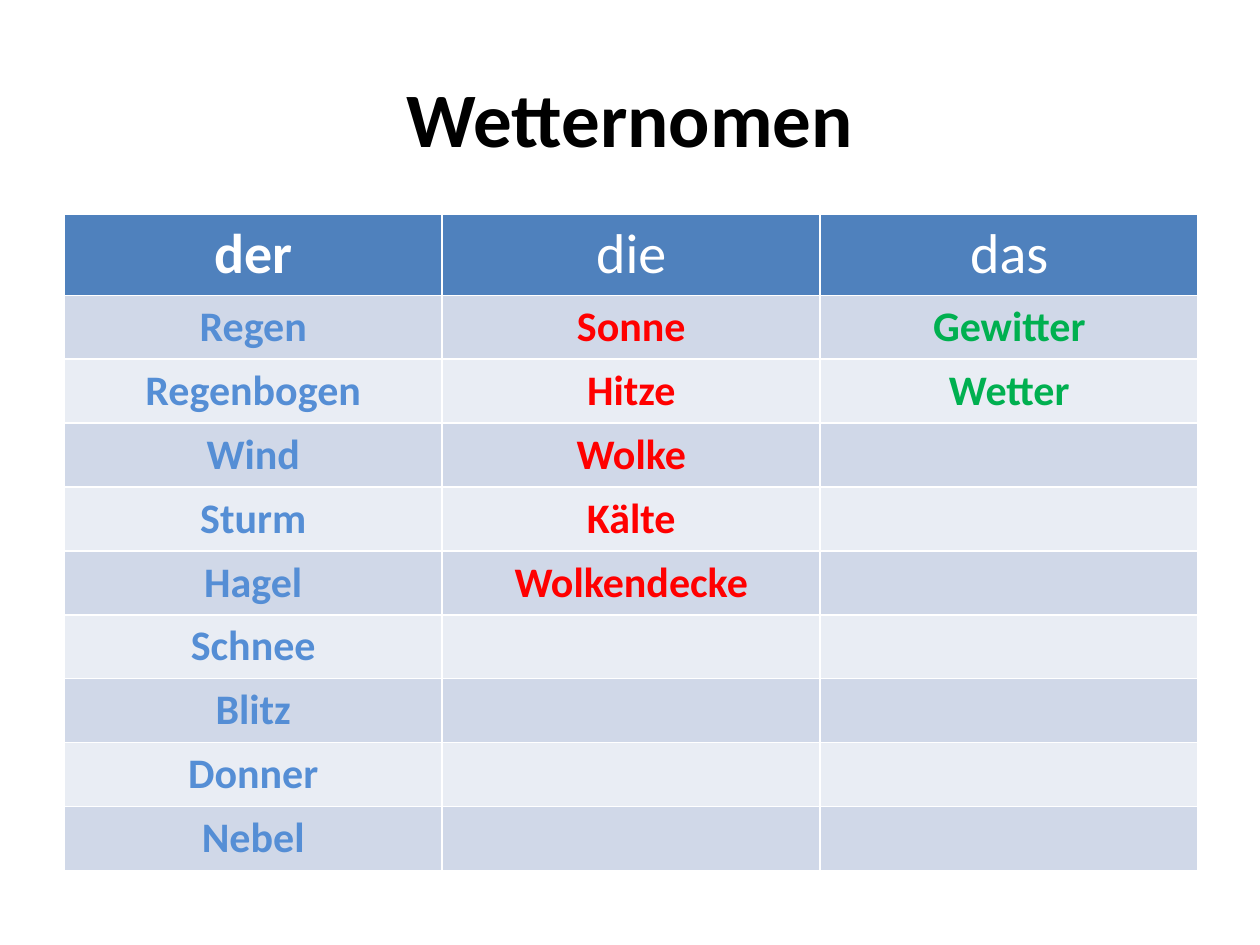
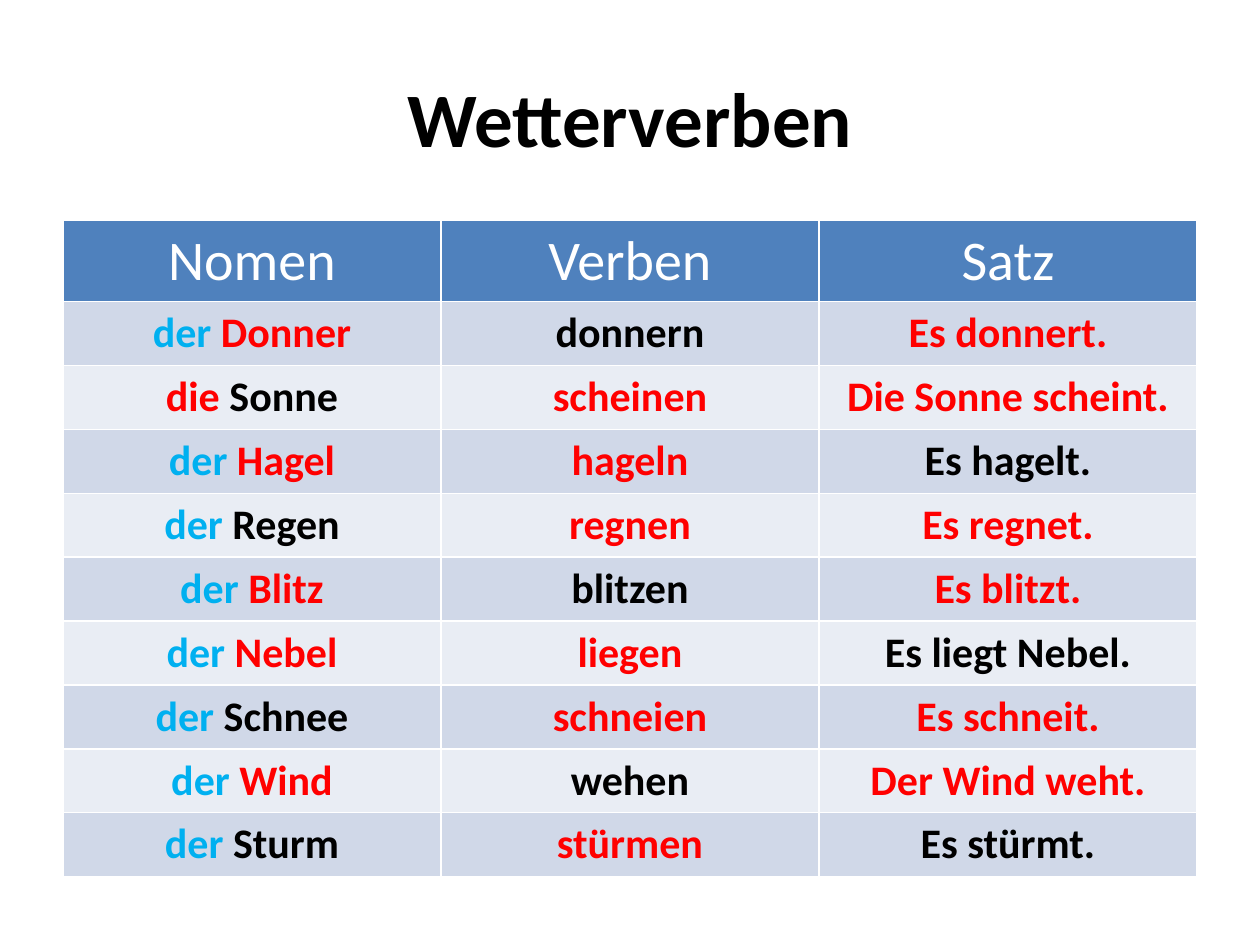
from dataclasses import dataclass
from itertools import zip_longest

from pptx import Presentation
from pptx.dml.color import RGBColor
from pptx.enum.text import MSO_ANCHOR, PP_ALIGN
from pptx.util import Inches, Pt


@dataclass(frozen=True)
class Theme:
    font: str = "Calibri"
    title_size: int = 44
    header_size: int = 32
    body_size: int = 24
    black: str = "000000"
    white: str = "FFFFFF"
    red: str = "FF0000"
    green: str = "00B050"
    noun_blue: str = "558ED5"
    article_blue: str = "00B0F0"
    header_fill: str = "4F81BD"
    bands: tuple = ("D0D8E8", "E9EDF4")


THEME = Theme()
COLUMN_WIDTH = 3
HEADER_HEIGHT = 0.63
ROW_HEIGHT = 0.5

# Nouns by article: article -> (colour, nouns)
WEATHER_NOUNS = {
    "der": (THEME.noun_blue, ["Regen", "Regenbogen", "Wind", "Sturm", "Hagel",
                              "Schnee", "Blitz", "Donner", "Nebel"]),
    "die": (THEME.red, ["Sonne", "Hitze", "Wolke", "Kälte", "Wolkendecke"]),
    "das": (THEME.green, ["Gewitter", "Wetter"]),
}

# Article, noun, verb, sentence, and which of them are given (the rest are answers)
WEATHER_VERBS = [
    ("der", "Donner", "donnern", "Es donnert.", {"verb"}),
    ("die", "Sonne", "scheinen", "Die Sonne scheint.", {"noun"}),
    ("der", "Hagel", "hageln", "Es hagelt.", {"sentence"}),
    ("der", "Regen", "regnen", "Es regnet.", {"noun"}),
    ("der", "Blitz", "blitzen", "Es blitzt.", {"verb"}),
    ("der", "Nebel", "liegen", "Es liegt Nebel.", {"sentence"}),
    ("der", "Schnee", "schneien", "Es schneit.", {"noun"}),
    ("der", "Wind", "wehen", "Der Wind weht.", {"verb"}),
    ("der", "Sturm", "stürmen", "Es stürmt.", {"noun", "sentence"}),
]


def write_spans(para, spans, size, bold):
    """Fill a centred paragraph with (text, colour) spans."""
    para.alignment = PP_ALIGN.CENTER
    para.font.name = THEME.font
    para.font.size = Pt(size)
    para.font.bold = bold
    for text, color in spans:
        span = para.add_run()
        span.text = text
        span.font.color.rgb = RGBColor.from_string(color)


def add_titled_page(deck, title):
    page = deck.slides.add_slide(deck.slide_layouts[5])
    box = page.shapes.title
    box.left, box.top = Inches(0.5), Inches(0.3)
    box.width, box.height = Inches(9), Inches(1.25)
    box.text_frame.vertical_anchor = MSO_ANCHOR.MIDDLE
    write_spans(box.text_frame.paragraphs[0], [(title, THEME.black)],
                THEME.title_size, True)
    return page


def fill_cell(cell, spans, fill, size, bold):
    cell.fill.solid()
    cell.fill.fore_color.rgb = RGBColor.from_string(fill)
    write_spans(cell.text_frame.paragraphs[0], spans, size, bold)


def add_word_table(page, left, top, headers, rows, bold_headers=()):
    """Add a banded table; its default style supplies the white borders."""
    height = HEADER_HEIGHT + ROW_HEIGHT * len(rows)
    table = page.shapes.add_table(
        len(rows) + 1, len(headers), Inches(left), Inches(top),
        Inches(COLUMN_WIDTH * len(headers)), Inches(height)).table
    for column in table.columns:
        column.width = Inches(COLUMN_WIDTH)
    for row in table.rows:
        row.height = Inches(ROW_HEIGHT)
    table.rows[0].height = Inches(HEADER_HEIGHT)

    # Header row
    for column, text in enumerate(headers):
        fill_cell(table.cell(0, column), [(text, THEME.white)], THEME.header_fill,
                  THEME.header_size, text in bold_headers)

    # Word rows
    for number, row in enumerate(rows):
        band = THEME.bands[number % len(THEME.bands)]
        for column, spans in enumerate(row):
            fill_cell(table.cell(number + 1, column), spans, band,
                      THEME.body_size, True)


def noun_rows():
    columns = [[[(noun, color)] for noun in nouns]
               for color, nouns in WEATHER_NOUNS.values()]
    return list(zip_longest(*columns, fillvalue=[]))


def verb_rows():
    article_colors = {"der": THEME.article_blue, "die": THEME.red}
    rows = []
    for article, noun, verb, sentence, given in WEATHER_VERBS:
        noun_color, verb_color, sentence_color = (
            THEME.black if part in given else THEME.red
            for part in ("noun", "verb", "sentence"))
        rows.append([
            [(article + " ", article_colors[article]), (noun, noun_color)],
            [(verb, verb_color)],
            [(sentence, sentence_color)],
        ])
    return rows


def main():
    deck = Presentation()
    deck.slide_width, deck.slide_height = Inches(10), Inches(7.5)

    # Weather nouns sorted by article
    page = add_titled_page(deck, "Wetternomen")
    add_word_table(page, 0.51, 1.7, list(WEATHER_NOUNS), noun_rows(),
                   bold_headers=("der",))

    # Weather verbs with noun and sentence
    page = add_titled_page(deck, "Wetterverben")
    add_word_table(page, 0.5, 1.75, ["Nomen", "Verben", "Satz"], verb_rows())

    deck.save("out.pptx")


if __name__ == "__main__":
    main()
